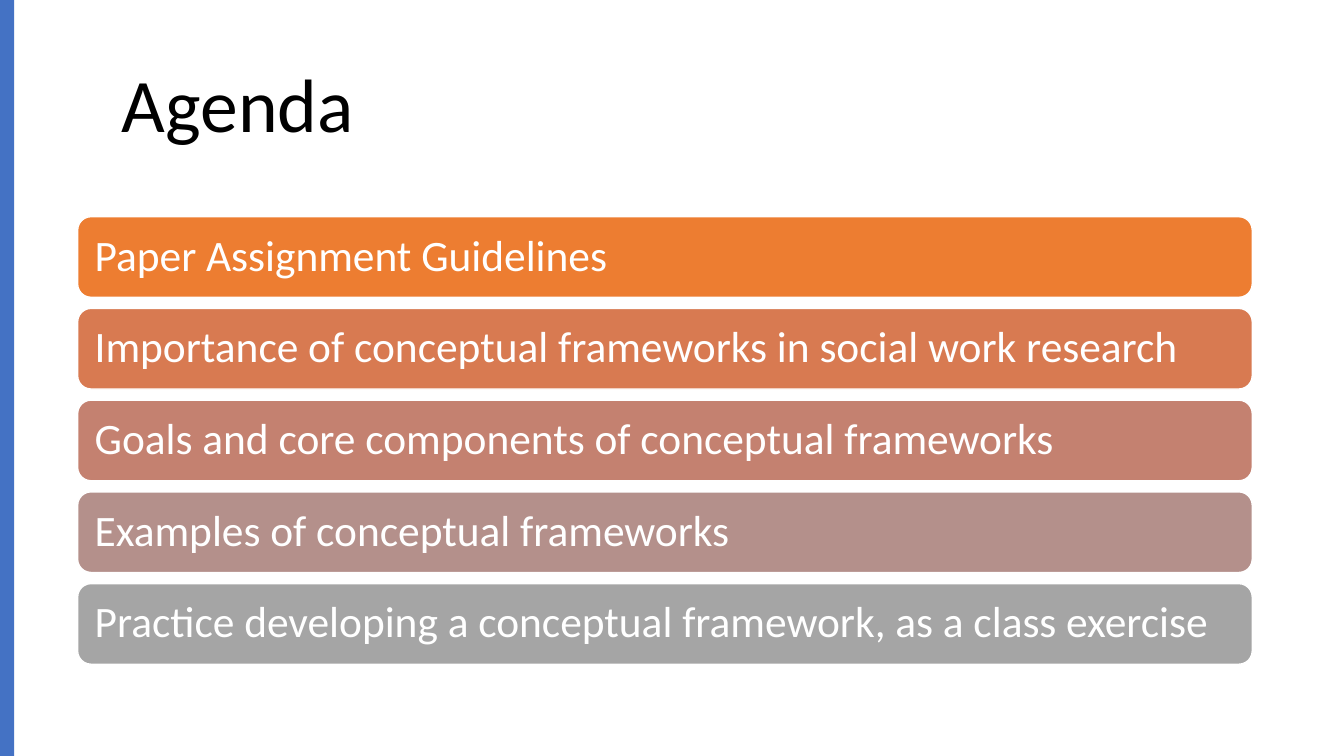
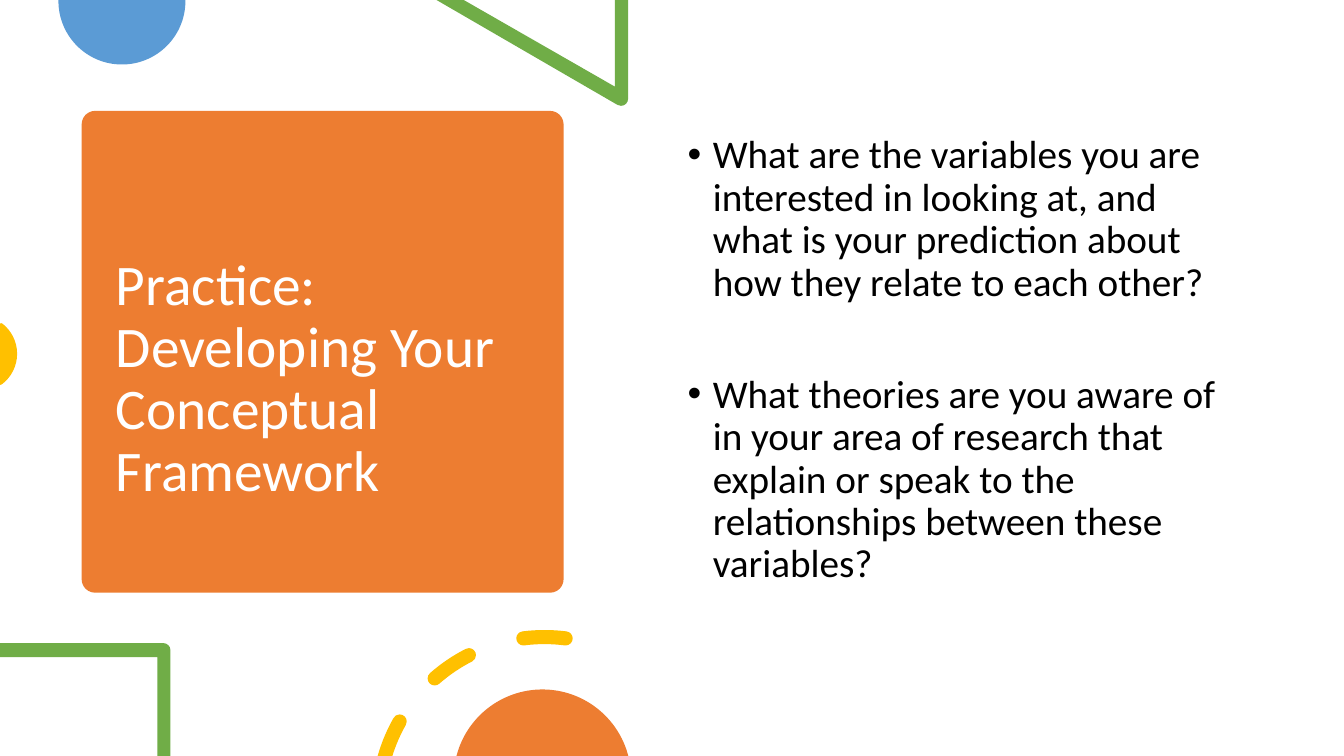
from dataclasses import dataclass
from math import ceil, cos, floor, radians, sin, tan

from lxml.etree import SubElement
from pptx import Presentation
from pptx.dml.color import RGBColor
from pptx.enum.shapes import MSO_SHAPE as SHAPE
from pptx.enum.text import MSO_ANCHOR as ANCHOR, MSO_AUTO_SIZE as AUTOSIZE, PP_ALIGN as ALIGN
from pptx.oxml.ns import qn
from pptx.util import Inches, Pt

# Content
AGENDA_TITLE = "Agenda"
AGENDA = [
    ("Paper Assignment Guidelines", "ED7D31"),
    ("Importance of conceptual frameworks in social work research", "D87A51"),
    ("Goals and core components of conceptual frameworks", "C48170"),
    ("Examples of conceptual frameworks", "B4908B"),
    ("Practice developing a conceptual framework, as a class exercise", "A5A5A5"),
]
PRACTICE_TITLE = "Practice: Developing Your Conceptual Framework"
QUESTIONS = [
    "What are the variables you are interested in looking at, and what is your "
    "prediction about how they relate to each other?",
    "What theories are you aware of in your area of research that explain or speak to "
    "the relationships between these variables?",
]


@dataclass(frozen=True)
class Theme:
    font: str = "Calibri"
    black: str = "000000"
    white: str = "FFFFFF"
    navy: str = "4472C4"
    blue: str = "5B9BD5"
    green: str = "70AD47"
    gold: str = "FFC000"
    orange: str = "ED7D31"
    title: float = 54
    card_title: float = 41
    bar: float = 31
    body: float = 28


T = Theme()
WIDTH, HEIGHT = 13.33, 7.5


# Shared helpers
def rgb(color):
    return RGBColor.from_string(color)


def place(sp, box):
    for name, value in zip(("left", "top", "width", "height"), box):
        setattr(sp, name, Inches(value))


def paint(sp, fill, line=None):
    sp.shadow.inherit = False
    sp.fill.solid()
    sp.fill.fore_color.rgb = rgb(fill)
    if line:
        sp.line.color.rgb = rgb(line)
        sp.line.width = Pt(1)
    else:
        sp.line.fill.background()


def add_box(s, kind, box, fill, line=None):
    sp = s.shapes.add_shape(kind, *map(Inches, box))
    paint(sp, fill, line)
    return sp


def write(sp, texts, size, color, frame=None, para=None):
    tf = sp.text_frame
    frame_format = {"word_wrap": True, "auto_size": AUTOSIZE.NONE,
                    "vertical_anchor": ANCHOR.MIDDLE, **(frame or {})}
    for name, value in frame_format.items():
        setattr(tf, name, value)
    para_format = {"alignment": ALIGN.LEFT, "line_spacing": 0.9,
                   "space_before": Pt(0), **(para or {})}
    for i, text in enumerate(texts):
        p = tf.add_paragraph() if i else tf.paragraphs[0]
        for name, value in para_format.items():
            setattr(p, name, value)
        r = p.add_run()
        r.text = text
        for name, value in {"name": T.font, "size": Pt(size), "bold": False}.items():
            setattr(r.font, name, value)
        r.font.color.rgb = rgb(color)
    return tf


# Outlines: a node is (point,) for a line, (control, control, point) for a curve
def line(*points):
    return [(point,) for point in points]


def arc(cx, cy, radius, start, end):
    """Angles in degrees, clockwise from the right; split at each quarter turn."""
    low, high = sorted((start, end))
    quarters = [90 * k for k in range(floor(low / 90) + 1, ceil(high / 90))]
    stops = sorted([low, *quarters, high], reverse=start > end)

    def at(angle, pull=0):
        a = radians(angle)
        return (cx + radius * (cos(a) - pull * sin(a)),
                cy + radius * (sin(a) + pull * cos(a)))

    nodes = [(at(start),)]
    for a, b in zip(stops, stops[1:]):
        pull = 4 / 3 * tan(radians(b - a) / 4)
        nodes.append((at(a, pull), at(b, -pull), at(b)))
    return nodes


def add_outline(s, fill, *contours):
    ends = [[tuple(map(Inches, node[-1])) for node in nodes] for nodes in contours]
    builder = s.shapes.build_freeform(*ends[0][0])
    for i, (start, *rest) in enumerate(ends):
        if i:
            builder.move_to(*start)
        builder.add_line_segments(rest, close=True)
    sp = builder.convert_to_shape()
    paint(sp, fill)

    # Turn the segments that have control points into curves
    steps = [step for step in next(sp.element.iter(qn("a:path")))
             if step.tag != qn("a:close")]
    for step, node in zip(steps, [node for nodes in contours for node in nodes]):
        if len(node) == 3:
            step.tag = qn("a:cubicBezTo")
            step.remove(step[0])
            for x, y in node:
                SubElement(step, qn("a:pt"), x=str(Inches(x) - sp.left),
                           y=str(Inches(y) - sp.top))


# Dashed ring
RING = (5.4, 7.97)
RING_RADIUS, HALF_STROKE = 1.65, 0.07
OUTER, INNER = RING_RADIUS + HALF_STROKE, RING_RADIUS - HALF_STROKE


def dash_cap(angle, turn):
    cx = RING[0] + RING_RADIUS * cos(radians(angle))
    cy = RING[1] + RING_RADIUS * sin(radians(angle))
    return arc(cx, cy, HALF_STROKE, angle + turn, angle + turn + 180)[1:]


def ring_dash(start, end):
    return (arc(*RING, OUTER, start, end) + dash_cap(end, 0)
            + arc(*RING, INNER, end, start)[1:] + dash_cap(start, 180))


CUT_DASH = (arc(*RING, OUTER, 195.86, 209.5) + dash_cap(209.5, 0)
            + arc(*RING, INNER, 209.5, 197.3)[1:])

# Decorations cut off by the slide edges: colour, then contours
DECORATIONS = [
    (T.blue, arc(1.21, 0.01, 0.63, 0, 180) + line((0.58, 0), (1.84, 0))),
    (T.green, arc(6.16, 0.98, HALF_STROKE, 0, 120)
     + line((4.33, 0), (4.6, 0), (6.1, 0.86), (6.1, 0), (6.23, 0))),
    (T.gold, arc(-0.21, 3.51, 0.38, -53, 53) + line((0, 3.82), (0, 3.21))),
    (T.green, arc(1.62, 6.45, HALF_STROKE, 270, 360)
     + line((1.69, HEIGHT), (1.56, HEIGHT), (1.56, 6.52), (0, 6.52), (0, 6.38))),
    (T.gold, CUT_DASH, ring_dash(228.7, 243), ring_dash(262.7, 277.3)),
    (T.orange, arc(5.38, 7.72, 0.88, 194.5, 345.5)),
]


def agenda_slide(prs):
    s = prs.slides.add_slide(prs.slide_layouts[5])
    title = s.shapes.title
    place(title, (0.57, 0.68, 3.58, 0.79))
    write(title, [AGENDA_TITLE], T.title, T.black, para={"alignment": ALIGN.CENTER})
    add_box(s, SHAPE.RECTANGLE, (0, 0, 0.14, HEIGHT), T.navy)

    # Agenda bars
    first, last = 2.15, 5.79
    pitch = (last - first) / (len(AGENDA) - 1)
    inset = {"margin_left": Inches(0.13), "margin_right": Inches(0.13)}
    for i, (text, fill) in enumerate(AGENDA):
        box = (0.77, first + i * pitch, 11.65, 0.8)
        bar = add_box(s, SHAPE.ROUNDED_RECTANGLE, box, fill, T.white)
        write(bar, [text], T.bar, T.white, inset)


def practice_slide(prs):
    s = prs.slides.add_slide(prs.slide_layouts[1])
    title, body = s.placeholders

    # Title card, behind its text
    card = add_box(s, SHAPE.ROUNDED_RECTANGLE, (0.81, 1.1, 4.78, 4.78), T.orange)
    card.adjustments[0] = 0.028
    title.element.addprevious(card.element)
    place(title, (1.05, 1.22, 4.31, 4.56))
    write(title, [PRACTICE_TITLE], T.card_title, T.white, {"margin_top": Inches(0.59)})

    # Questions
    place(body, (6.72, 1.29, 5.69, 4.96))
    tf = write(body, QUESTIONS, T.body, T.black, {"vertical_anchor": ANCHOR.TOP})
    for p in tf.paragraphs:
        pPr = p._p.get_or_add_pPr()
        pPr.set("marL", str(Inches(0.25)))
        pPr.set("indent", str(Inches(-0.25)))
    for p in tf.paragraphs[1:]:
        p.space_before = Pt(50)

    for fill, *contours in DECORATIONS:
        add_outline(s, fill, *contours)


def main():
    prs = Presentation()
    prs.slide_width, prs.slide_height = Inches(WIDTH), Inches(HEIGHT)
    agenda_slide(prs)
    practice_slide(prs)
    prs.save("out.pptx")


if __name__ == "__main__":
    main()
